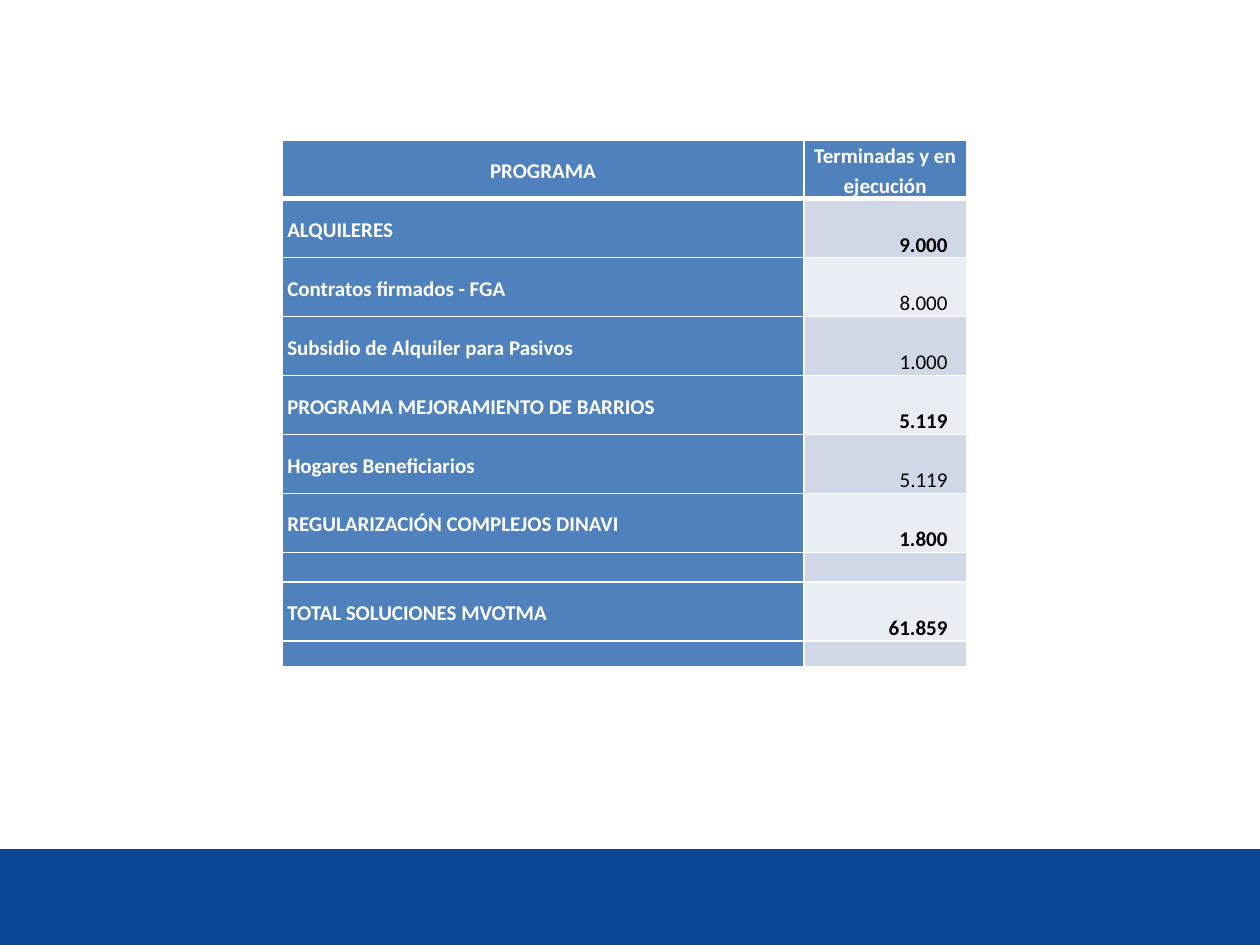
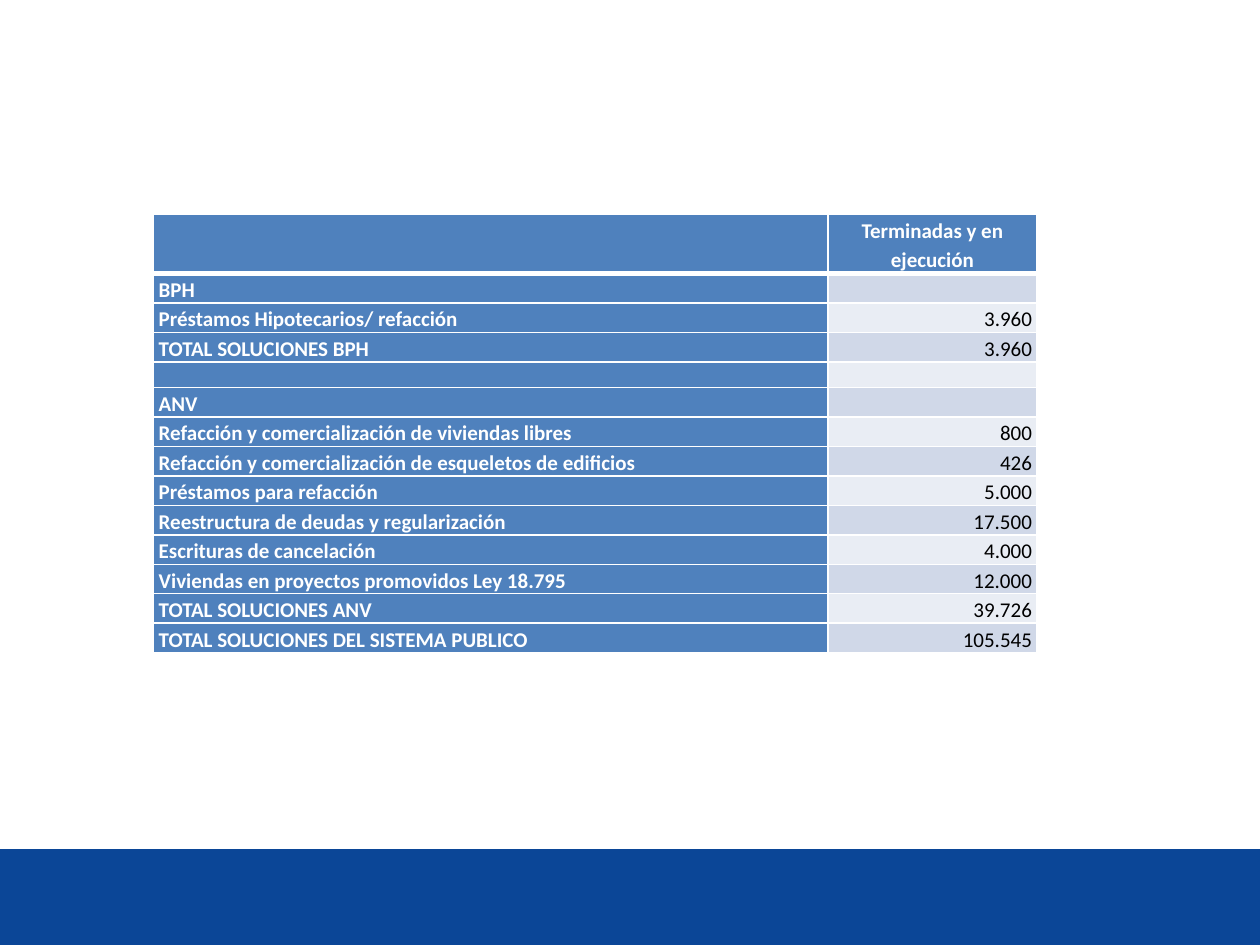
import dataclasses

import lxml.etree
import pptx
import pptx.dml.color
import pptx.enum.shapes
import pptx.enum.text
import pptx.oxml.ns
import pptx.util

ALIGN = pptx.enum.text.PP_ALIGN
ANCHOR = pptx.enum.text.MSO_ANCHOR


@dataclasses.dataclass(frozen=True)
class Theme:
    band: str = "0B4697"
    label_fill: str = "4F81BD"
    stripes: tuple = ("D0D8E8", "E9EDF4")
    light_text: str = "FFFFFF"
    dark_text: str = "000000"
    border: str = "FFFFFF"
    font: str = "Calibri"
    text_size: float = 12
    line_spacing: float = 1.15
    line_height: float = 16.85  # points taken by one line of table text
    thin: float = 1
    thick: float = 3
    side_margin: float = 0.04


THEME = Theme()
SLIDE_WIDTH = pptx.util.Inches(10)
SLIDE_HEIGHT = pptx.util.Inches(7.5)
BAND_SHARE = 0.1013
THIN_ROW = 0.86  # height of a spacer row, in text lines
VALUE_HEADING = "Terminadas y en ejecución"

# Each row: label, value, height in text lines, bold value
PROGRAMS = [
    ("PROGRAMA", VALUE_HEADING, 2, True),
    ("ALQUILERES", "9.000", 2, True),
    ("Contratos firmados - FGA", "8.000", 2, False),
    ("Subsidio de Alquiler para Pasivos", "1.000", 2, False),
    ("PROGRAMA MEJORAMIENTO DE BARRIOS", "5.119", 2, True),
    ("Hogares Beneficiarios", "5.119", 2, False),
    ("REGULARIZACIÓN COMPLEJOS DINAVI", "1.800", 2, True),
    ("", "", 1, False),
    ("TOTAL SOLUCIONES MVOTMA", "61.859", 2, True),
    ("", "", THIN_ROW, False),
]
PUBLIC_SYSTEM = [
    ("", VALUE_HEADING, 2, True),
    ("BPH", "", 1, False),
    ("Préstamos Hipotecarios/ refacción", "3.960", 1, False),
    ("TOTAL SOLUCIONES BPH", "3.960", 1, False),
    ("", "", THIN_ROW, False),
    ("ANV", "", 1, False),
    ("Refacción y comercialización de viviendas libres", "800", 1, False),
    ("Refacción y comercialización de esqueletos de edificios", "426", 1, False),
    ("Préstamos para refacción", "5.000", 1, False),
    ("Reestructura de deudas y regularización", "17.500", 1, False),
    ("Escrituras de cancelación", "4.000", 1, False),
    ("Viviendas en proyectos promovidos Ley 18.795", "12.000", 1, False),
    ("TOTAL SOLUCIONES ANV", "39.726", 1, False),
    ("TOTAL SOLUCIONES DEL SISTEMA PUBLICO", "105.545", 1, False),
]


def color(value):
    return pptx.dml.color.RGBColor.from_string(value)


def add_layout_band(slide):
    """Put the footer band on the layout that the slides share."""
    height = int(SLIDE_HEIGHT * BAND_SHARE)
    band = slide.shapes.add_shape(
        pptx.enum.shapes.MSO_SHAPE.RECTANGLE,
        0, SLIDE_HEIGHT - height, SLIDE_WIDTH, height)
    band.shadow.inherit = False
    band.fill.solid()
    band.fill.fore_color.rgb = color(THEME.band)
    band.line.fill.background()
    slide.slide_layout.shapes.element.append(band.element)


def set_borders(cell, row):
    """Thin white grid, with a thick rule under the heading row."""
    properties = cell._tc.get_or_add_tcPr()
    qn = pptx.oxml.ns.qn
    widths = {
        "a:lnL": THEME.thin,
        "a:lnR": THEME.thin,
        "a:lnT": THEME.thick if row == 1 else THEME.thin,
        "a:lnB": THEME.thick if row == 0 else THEME.thin,
    }
    for position, (tag, width) in enumerate(widths.items()):
        line = lxml.etree.Element(qn(tag), w=str(pptx.util.Pt(width)))
        fill = lxml.etree.SubElement(line, qn("a:solidFill"))
        lxml.etree.SubElement(fill, qn("a:srgbClr"), val=THEME.border)
        properties.insert(position, line)


def write_text(cell, text, text_color, bold, alignment):
    paragraph = cell.text_frame.paragraphs[0]
    if not text:
        # An empty cell keeps the table's type size, so its row stays low
        lxml.etree.SubElement(
            paragraph._p, pptx.oxml.ns.qn("a:endParaRPr"),
            sz=str(int(THEME.text_size * 100)))
        return
    paragraph.alignment = alignment
    paragraph.line_spacing = THEME.line_spacing
    run = paragraph.add_run()
    run.text = text
    run.font.name = THEME.font
    run.font.size = pptx.util.Pt(THEME.text_size)
    run.font.bold = bold
    run.font.color.rgb = color(text_color)


def format_cell(cell, row, fill, anchor, right_margin=THEME.side_margin):
    cell.fill.solid()
    cell.fill.fore_color.rgb = color(fill)
    cell.vertical_anchor = anchor
    cell.margin_left = pptx.util.Inches(THEME.side_margin)
    cell.margin_right = pptx.util.Inches(right_margin)
    cell.margin_top = cell.margin_bottom = 0
    set_borders(cell, row)


def add_solutions_table(slide, rows, left, top, widths, value_margin, value_anchor):
    """Place a label and value table; lengths are shares of the slide."""
    column_widths = [int(SLIDE_WIDTH * share) for share in widths]
    heights = [pptx.util.Pt(lines * THEME.line_height) for _, _, lines, _ in rows]
    table = slide.shapes.add_table(
        len(rows), 2, int(SLIDE_WIDTH * left), int(SLIDE_HEIGHT * top),
        sum(column_widths), sum(heights)).table
    table.horz_banding = False
    for column, width in zip(table.columns, column_widths):
        column.width = width

    for index, (label, value, _, bold) in enumerate(rows):
        table.rows[index].height = heights[index]
        label_cell, value_cell = table.cell(index, 0), table.cell(index, 1)
        heading = index == 0
        format_cell(label_cell, index, THEME.label_fill, ANCHOR.MIDDLE)
        write_text(label_cell, label, THEME.light_text, True,
                   ALIGN.CENTER if heading else ALIGN.LEFT)
        if heading:
            format_cell(value_cell, index, THEME.label_fill, ANCHOR.MIDDLE)
            write_text(value_cell, value, THEME.light_text, bold, ALIGN.CENTER)
        else:
            stripe = THEME.stripes[(index - 1) % 2]
            format_cell(value_cell, index, stripe, value_anchor, value_margin)
            write_text(value_cell, value, THEME.dark_text, bold, ALIGN.RIGHT)


def main():
    presentation = pptx.Presentation()
    presentation.slide_width = SLIDE_WIDTH
    presentation.slide_height = SLIDE_HEIGHT
    blank = presentation.slide_layouts[6]

    # Housing programmes
    programs_slide = presentation.slides.add_slide(blank)
    add_layout_band(programs_slide)
    add_solutions_table(programs_slide, PROGRAMS, 0.224, 0.148, (0.414, 0.129),
                        0.15, ANCHOR.BOTTOM)

    # Whole public system
    system_slide = presentation.slides.add_slide(blank)
    add_solutions_table(system_slide, PUBLIC_SYSTEM, 0.122, 0.227, (0.535, 0.166),
                        THEME.side_margin, ANCHOR.MIDDLE)

    presentation.save("out.pptx")


if __name__ == "__main__":
    main()
